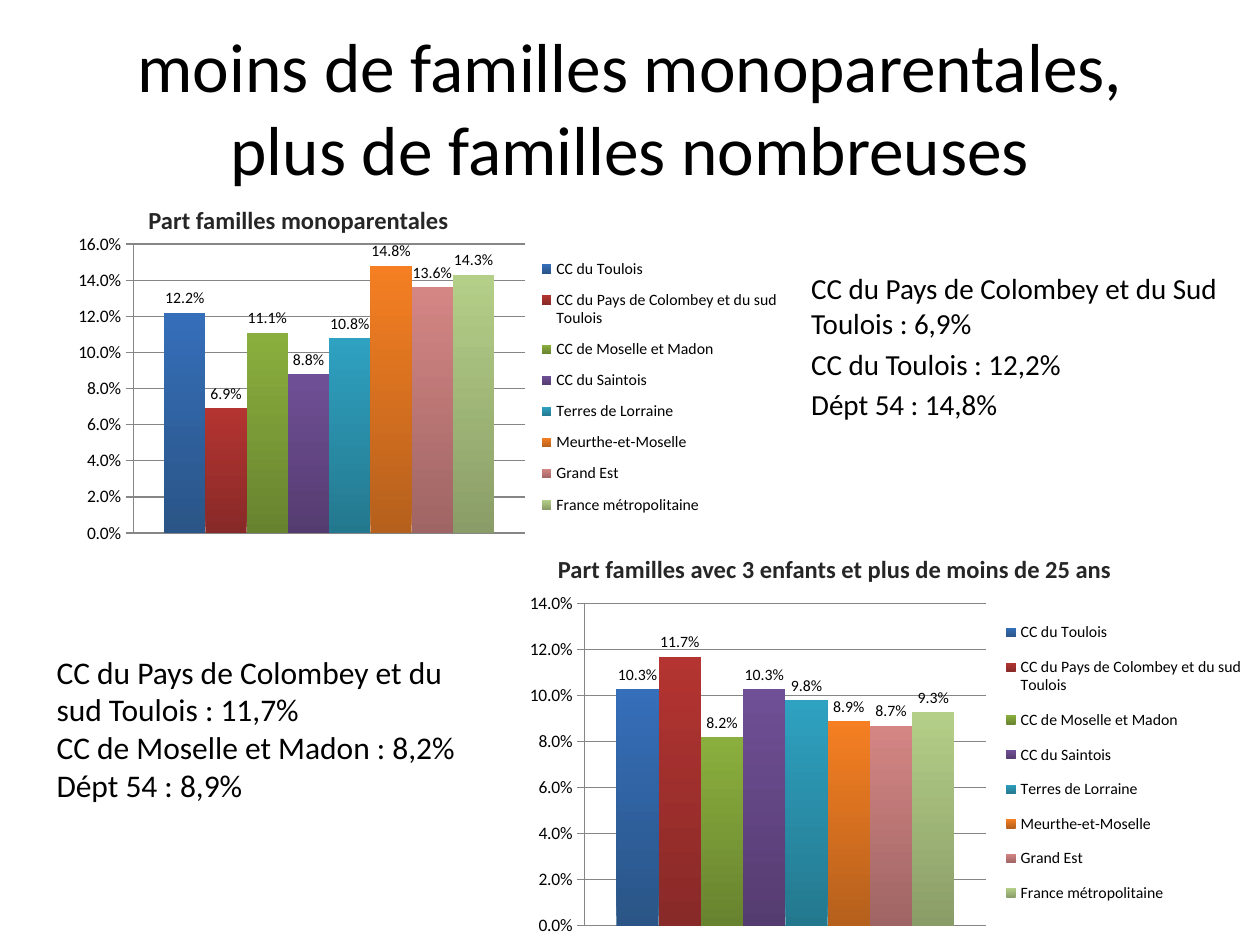
from pptx import Presentation
from pptx.chart.data import CategoryChartData
from pptx.dml.color import RGBColor
from pptx.enum.chart import XL_CHART_TYPE, XL_LABEL_POSITION, XL_LEGEND_POSITION, XL_TICK_LABEL_POSITION, XL_TICK_MARK
from pptx.enum.text import MSO_ANCHOR, MSO_AUTO_SIZE, PP_ALIGN
from pptx.oxml import parse_xml
from pptx.oxml.ns import nsdecls
from pptx.util import Inches, Pt

COLUMN = XL_CHART_TYPE.COLUMN_CLUSTERED
OUT_END = XL_LABEL_POSITION.OUTSIDE_END
RIGHT = XL_LEGEND_POSITION.RIGHT
LOW = XL_TICK_LABEL_POSITION.LOW
TICK_OUT = XL_TICK_MARK.OUTSIDE
MIDDLE = MSO_ANCHOR.MIDDLE
NO_FIT = MSO_AUTO_SIZE.NONE
CENTER = PP_ALIGN.CENTER

FONT = "Calibri"
PERCENT = "0.0%"
COLORS = {"text": "000000", "head": "262626", "grid": "868686"}
# Area name: top and bottom colour of its column
AREAS = {
    "CC du Toulois": ("356EB9", "2A5586"),
    "CC du Pays de Colombey et du sud Toulois": ("B43431", "882A28"),
    "CC de Moselle et Madon": ("8BAF3E", "68832F"),
    "CC du Saintois": ("6F4F96", "553C70"),
    "Terres de Lorraine": ("2FA1C1", "24788E"),
    "Meurthe-et-Moselle": ("F57F22", "B5601D"),
    "Grand Est": ("D48684", "9F6564"),
    "France métropolitaine": ("B4CF88", "8A9D68"),
}


def rgb(name):
    return RGBColor.from_string(COLORS[name])


def style(font, size, color="text", bold=False):
    look = {"name": FONT, "size": Pt(size), "bold": bold}
    for key, value in look.items():
        setattr(font, key, value)
    font.color.rgb = rgb(color)


def layout(x, y, w, h, inner=False):
    """Return a manual layout, in fractions of the chart."""
    target = '<c:layoutTarget val="inner"/>' if inner else ""
    sizes = "".join(f'<c:{k} val="{v}"/>' for k, v in zip("xywh", (x, y, w, h)))
    return parse_xml(
        f'<c:layout {nsdecls("c")}><c:manualLayout>{target}'
        f'<c:xMode val="edge"/><c:yMode val="edge"/>{sizes}'
        "</c:manualLayout></c:layout>")


def add_title(slide, text, box):
    title = slide.shapes.title
    title.left, title.top, title.width, title.height = map(Inches, box)
    frame = title.text_frame
    frame.text = text
    frame.word_wrap = True
    frame.auto_size = NO_FIT
    frame.vertical_anchor = MIDDLE
    para = frame.paragraphs[0]
    para.alignment = CENTER
    style(para.font, 39.6)


def add_text(slide, lines, box, size, color="text", bold=False, gap=0, wrap=True):
    frame = slide.shapes.add_textbox(*map(Inches, box)).text_frame
    frame.word_wrap = wrap
    for i, line in enumerate(lines):
        para = frame.paragraphs[0] if i == 0 else frame.add_paragraph()
        para.text = line
        para.space_before = Pt(gap if i else 0)
        style(para.font, size, color, bold)


def add_labels(series):
    labels = series.data_labels
    look = {"show_value": True, "position": OUT_END,
            "number_format": PERCENT, "number_format_is_linked": False}
    for key, value in look.items():
        setattr(labels, key, value)
    style(labels.font, 9)


def add_columns(slide, values, box, top):
    """Chart one share per area, on an axis from zero to top."""
    data = CategoryChartData(number_format=PERCENT)
    data.categories = ["1"]
    for area, value in zip(AREAS, values):
        data.add_series(area, [value])
    chart = slide.shapes.add_chart(COLUMN, *map(Inches, box), data).chart
    style(chart.font, 10)
    chart.has_title = False

    plot = chart.plots[0]
    plot.gap_width = 150
    plot.overlap = 0
    plot.vary_by_categories = False
    for series, (light, dark) in zip(plot.series, AREAS.values()):
        fill = series.format.fill
        fill.gradient()
        fill.gradient_angle = 90
        for stop, tone in zip(fill.gradient_stops, (dark, light)):
            stop.color.rgb = RGBColor.from_string(tone)
        add_labels(series)

    chart.category_axis.visible = False
    axis = chart.value_axis
    look = {"minimum_scale": 0, "maximum_scale": top, "major_unit": 0.02,
            "major_tick_mark": TICK_OUT, "tick_label_position": LOW,
            "has_major_gridlines": True}
    for key, value in look.items():
        setattr(axis, key, value)
    axis.tick_labels.number_format = PERCENT
    axis.tick_labels.number_format_is_linked = False
    for line in (axis.format.line, axis.major_gridlines.format.line):
        line.color.rgb = rgb("grid")
        line.width = Pt(0.75)

    chart.has_legend = True
    legend = chart.legend
    legend.position = RIGHT
    legend.include_in_layout = False
    style(legend.font, 9)

    root = chart.element
    area = root.xpath(".//c:plotArea")[0]
    for old in area.xpath("./c:layout"):
        area.remove(old)
    area.insert(0, layout(0.095, 0.05, 0.54, 0.9, inner=True))
    place = root.xpath(".//c:legend")[0]
    for old in place.xpath("./c:layout"):
        place.remove(old)
    place.xpath("./c:legendPos")[0].addnext(layout(0.65, 0.06, 0.34, 0.87))


def build():
    deck = Presentation()
    deck.slide_width, deck.slide_height = Inches(10), Inches(7.5)
    slide = deck.slides.add_slide(deck.slide_layouts[5])
    add_title(slide, "moins de familles monoparentales, plus de familles nombreuses",
              (0.5, 0.3, 9, 1.09))
    add_text(slide, ["CC du Pays de Colombey et du Sud Toulois : 6,9%",
                     "CC du Toulois : 12,2%", "Dépt 54 : 14,8%"],
             (6.34, 2.1, 3.43, 1.26), 16.6, gap=3.3)
    add_columns(slide, [0.122, 0.069, 0.111, 0.088, 0.108, 0.148, 0.136, 0.143],
                (0.51, 1.81, 5.76, 2.55), 0.16)
    add_columns(slide, [0.103, 0.117, 0.082, 0.103, 0.098, 0.089, 0.087, 0.093],
                (4.08, 4.65, 5.9, 2.84), 0.14)
    add_text(slide, ["Part familles avec 3 enfants et plus de moins de 25 ans"],
             (4.33, 4.35, 5, 0.34), 14, "head", True)
    add_text(slide, ["Part familles monoparentales"],
             (1.08, 1.58, 2.6, 0.34), 14, "head", True, wrap=False)
    add_text(slide, ["CC du Pays de Colombey et du sud Toulois : 11,7%",
                     "CC de Moselle et Madon : 8,2%", "Dépt 54 : 8,9%"],
             (0.35, 5.13, 3.49, 1.31), 18)
    deck.save("out.pptx")


if __name__ == "__main__":
    build()
